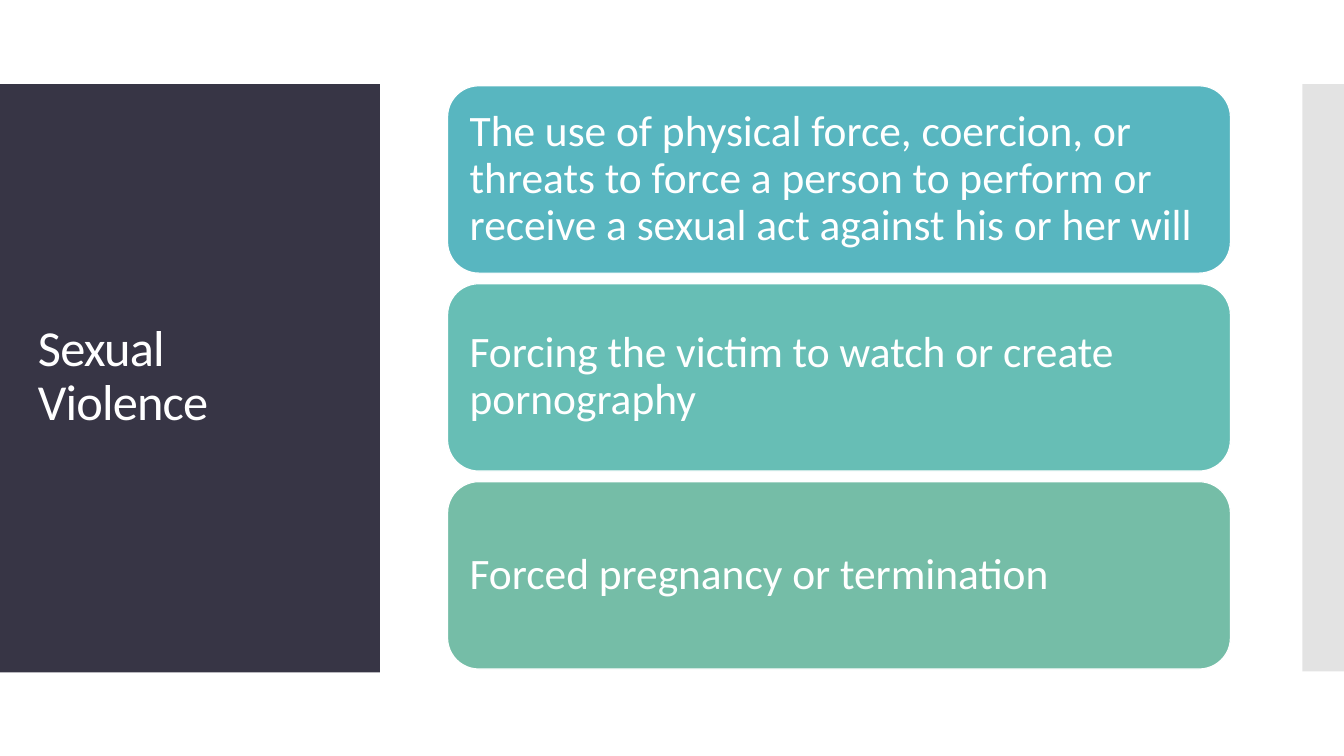
from dataclasses import dataclass

from lxml import etree
from pptx import Presentation
from pptx.dml.color import RGBColor
from pptx.enum.shapes import MSO_SHAPE
from pptx.enum.text import MSO_ANCHOR, PP_ALIGN
from pptx.oxml.ns import qn
from pptx.util import Pt

RECTANGLE = MSO_SHAPE.RECTANGLE
ROUNDED = MSO_SHAPE.ROUNDED_RECTANGLE
MIDDLE = MSO_ANCHOR.MIDDLE
LEFT = PP_ALIGN.LEFT

COLORS = {
    "white": "FFFFFF",
    "grey": "C8C8C8",
    "panel": "373545",
    "blue": "58B6C0",
    "teal": "67BEB5",
    "green": "75BDA7",
}
FONT = "Calibri"
CARD_LEFT, CARD_TOP = 319.7, 61.3
CARD_WIDTH, CARD_HEIGHT = 559.2, 133.8
CARD_STEP = 141.4


@dataclass(frozen=True)
class Card:
    text: str
    color: str


CARDS = [
    Card("The use of physical force, coercion, or threats to force a person "
         "to perform or receive a sexual act against his or her will", "blue"),
    Card("Forcing the victim to watch or create pornography", "teal"),
    Card("Forced pregnancy or termination", "green"),
]


def add_block(page, kind, left: float, top: float, width: float,
              height: float, color: str):
    box = page.shapes.add_shape(kind, Pt(left), Pt(top), Pt(width), Pt(height))
    box.shadow.inherit = False
    box.fill.solid()
    box.fill.fore_color.rgb = RGBColor.from_string(COLORS[color])
    box.line.fill.background()
    return box


def write_text(box, text: str, *, size: float, inset_x: float,
               inset_y: float, spacing: float = 0) -> None:
    frame = box.text_frame
    frame.word_wrap = True
    frame.vertical_anchor = MIDDLE
    frame.margin_left = frame.margin_right = Pt(inset_x)
    frame.margin_top = frame.margin_bottom = Pt(inset_y)
    para = frame.paragraphs[0]
    para.alignment = LEFT
    para.line_spacing = 0.9
    span = para.add_run()
    span.text = text
    span.font.name = FONT
    span.font.size = Pt(size)
    span.font.color.rgb = RGBColor.from_string(COLORS["white"])
    if spacing:
        span.font._element.set("spc", str(round(spacing * 100)))


def set_opacity(box, percent: int) -> None:
    color = box.fill._xPr.find(qn("a:solidFill"))[0]
    etree.SubElement(color, qn("a:alpha")).set("val", str(percent * 1000))


def add_card(page, card: Card, row: int) -> None:
    box = add_block(page, ROUNDED, CARD_LEFT, CARD_TOP + row * CARD_STEP,
                    CARD_WIDTH, CARD_HEIGHT, card.color)
    box.line.color.rgb = RGBColor.from_string(COLORS["white"])
    box.line.width = Pt(0.85)
    write_text(box, card.text, size=31, inset_x=9.3, inset_y=9.3)


def main() -> None:
    deck = Presentation()
    deck.slide_width, deck.slide_height = Pt(960), Pt(540)
    page = deck.slides.add_slide(deck.slide_layouts[6])

    side_strip = add_block(page, RECTANGLE, 930.3, 60, 29.7, 419.5, "grey")
    set_opacity(side_strip, 50)
    add_block(page, RECTANGLE, 0, 60, 271.3, 420.3, "panel")

    title = page.shapes.add_textbox(Pt(20), Pt(88.5), Pt(231.8), Pt(362))
    write_text(title, "Sexual Violence", size=36, inset_x=7.2, inset_y=3.6,
               spacing=-0.6)

    for row, card in enumerate(CARDS):
        add_card(page, card, row)

    deck.save("out.pptx")


if __name__ == "__main__":
    main()
